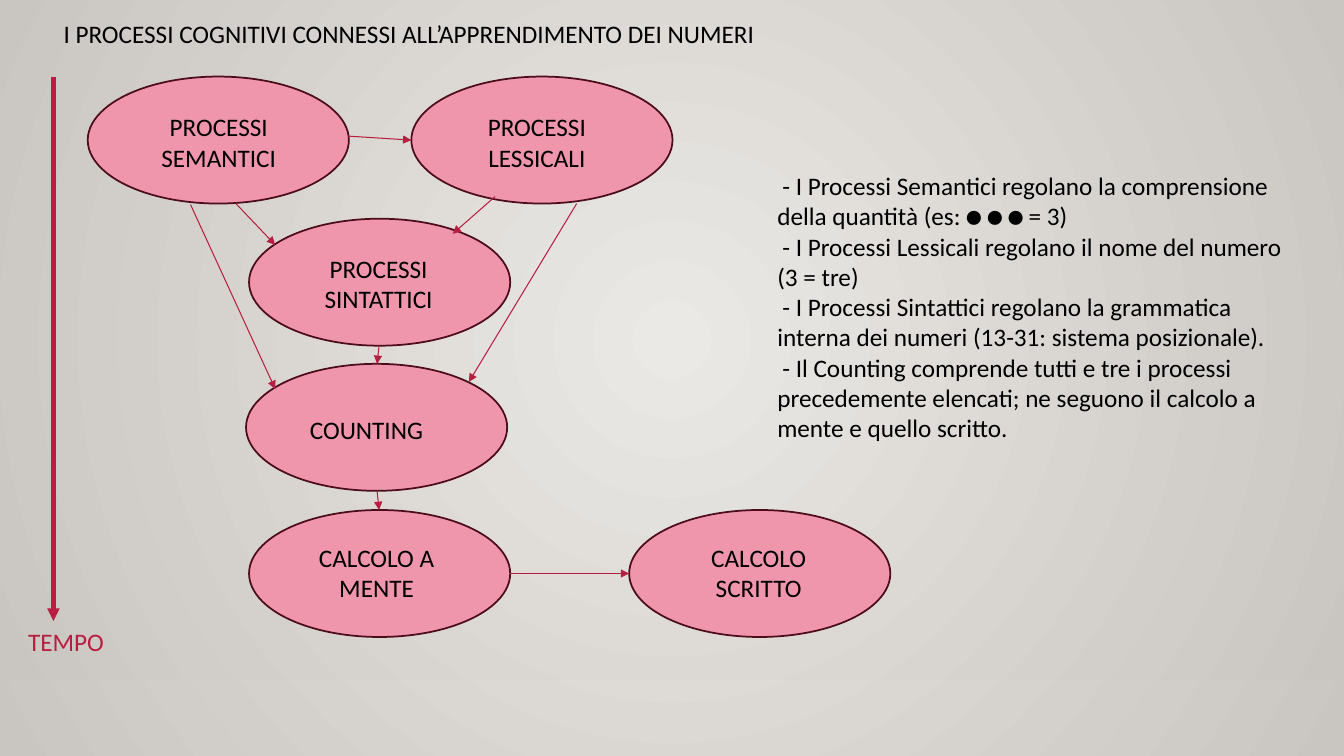
from lxml.etree import SubElement
from pptx import Presentation
from pptx.dml.color import RGBColor
from pptx.enum.shapes import MSO_CONNECTOR, MSO_SHAPE
from pptx.enum.text import MSO_ANCHOR, MSO_AUTO_SIZE, PP_ALIGN
from pptx.oxml.ns import qn
from pptx.util import Inches, Pt

BLACK = RGBColor(0x00, 0x00, 0x00)
CRIMSON = RGBColor(0xB7, 0x1E, 0x42)
PINK = RGBColor(0xEF, 0x96, 0xAC)
MAROON = RGBColor(0x4D, 0x0C, 0x1B)
GREY_LIGHT = RGBColor(0xEB, 0xE9, 0xE6)
GREY_DARK = RGBColor(0xC9, 0xC5, 0xC0)

FONT = "Calibri"
TEXT_SIZE = Pt(18)
OVAL_WIDTH, OVAL_HEIGHT = 2.59, 1.26

TITLE = "I PROCESSI COGNITIVI CONNESSI ALL’APPRENDIMENTO DEI NUMERI"

# Oval left and top, then label text, left, top, width and height
PROCESSES = [
    (0.87, 0.76, "PROCESSI SEMANTICI", (1.15, 1.06, 2.04, 0.71)),
    (4.08, 0.76, "PROCESSI LESSICALI", (4.42, 1.06, 1.81, 0.71)),
    (2.47, 2.17, "PROCESSI SINTATTICI", (2.75, 2.46, 2.01, 0.71)),
    (2.44, 3.61, "COUNTING", (2.73, 4.06, 1.81, 0.4)),
    (2.47, 5.06, "CALCOLO A MENTE", (2.83, 5.33, 1.81, 0.71)),
    (6.24, 5.06, "CALCOLO SCRITTO", (6.62, 5.33, 1.81, 0.71)),
]

ARROWS = [
    ((2.34, 2.02), (2.73, 2.43)),
    ((3.45, 1.35), (4.08, 1.39)),
    ((4.91, 1.95), (4.49, 2.32)),
    ((1.89, 2.03), (2.73, 3.86)),
    ((5.72, 2.02), (4.65, 3.79)),
    ((3.76, 3.43), (3.74, 3.61)),
    ((3.74, 4.87), (3.76, 5.06)),
    ((5.06, 5.69), (6.24, 5.69)),
]

EXPLANATIONS = [
    "- I Processi Semantici regolano la comprensione della quantità (es: ⚫️ ⚫️ ⚫️ = 3)",
    "- I Processi Lessicali regolano il nome del numero (3 = tre)",
    "- I Processi Sintattici regolano la grammatica interna dei numeri (13-31: sistema posizionale).",
    "- Il Counting comprende tutti e tre i processi precedemente elencati; "
    "ne seguono il calcolo a mente e quello scritto.",
]


def fill_radial(fill, element):
    """Give fill a round gradient from the centre; element holds its XML."""
    fill.gradient()
    for stop, color in zip(fill.gradient_stops, (GREY_LIGHT, GREY_DARK)):
        stop.color.rgb = color
    linear = element.find(".//" + qn("a:lin"))
    gradient = linear.getparent()
    gradient.remove(linear)
    circle = SubElement(gradient, qn("a:path"), {"path": "circle"})
    sides = dict.fromkeys("ltrb", "50000")
    SubElement(circle, qn("a:fillToRect"), sides)


def add_backdrop(slide):
    fill_radial(slide.background.fill, slide.element)
    backdrop = slide.shapes.add_shape(
        MSO_SHAPE.RECTANGLE, 0, 0, Inches(13.33), Inches(6.74))
    backdrop.shadow.inherit = False
    backdrop.line.fill.background()
    fill_radial(backdrop.fill, backdrop.element)
    # Behind the placeholders
    backdrop.element.getparent().insert(2, backdrop.element)


def place(shape, left, top, width, height):
    shape.left, shape.top = Inches(left), Inches(top)
    shape.width, shape.height = Inches(width), Inches(height)


def write(shape, texts, color=BLACK, alignment=PP_ALIGN.LEFT):
    frame = shape.text_frame
    frame.word_wrap = True
    frame.auto_size = MSO_AUTO_SIZE.NONE
    frame.vertical_anchor = MSO_ANCHOR.TOP
    for index, text in enumerate(texts):
        paragraph = frame.add_paragraph() if index else frame.paragraphs[0]
        paragraph.alignment = alignment
        paragraph.space_before = Pt(0)
        run = paragraph.add_run()
        run.text = text
        run.font.name = FONT
        run.font.size = TEXT_SIZE
        run.font.color.rgb = color


def add_label(slide, text, box, color=BLACK, alignment=PP_ALIGN.CENTER):
    label = slide.shapes.add_textbox(*map(Inches, box))
    write(label, [text], color, alignment)


def add_oval(slide, left, top):
    oval = slide.shapes.add_shape(
        MSO_SHAPE.OVAL, Inches(left), Inches(top),
        Inches(OVAL_WIDTH), Inches(OVAL_HEIGHT))
    oval.shadow.inherit = False
    oval.fill.solid()
    oval.fill.fore_color.rgb = PINK
    oval.line.color.rgb = MAROON
    oval.line.width = Pt(1.25)


def add_arrow(slide, start, end, width=0.75):
    arrow = slide.shapes.add_connector(
        MSO_CONNECTOR.STRAIGHT, *map(Inches, start + end))
    arrow.line.color.rgb = CRIMSON
    arrow.line.width = Pt(width)
    SubElement(arrow.line._get_or_add_ln(), qn("a:tailEnd"), {"type": "triangle"})
    SubElement(arrow.element.spPr, qn("a:effectLst"))


def fill_explanations(body):
    place(body, 7.61, 1.64, 5.37, 2.83)
    write(body, EXPLANATIONS)
    for paragraph in body.text_frame.paragraphs:
        properties = paragraph._p.get_or_add_pPr()
        properties.set("marL", "0")
        properties.set("indent", str(Inches(0.05)))
        SubElement(properties, qn("a:buNone"))


def main():
    presentation = Presentation()
    presentation.slide_width = Inches(13.33)
    presentation.slide_height = Inches(7.5)
    slide = presentation.slides.add_slide(presentation.slide_layouts[1])

    add_backdrop(slide)
    title = slide.shapes.title
    place(title, 0.53, 0.13, 8.73, 0.4)
    write(title, [TITLE])
    fill_explanations(slide.placeholders[1])

    for left, top, text, label_box in PROCESSES:
        add_oval(slide, left, top)
        add_label(slide, text, label_box)
    for start, end in ARROWS:
        add_arrow(slide, start, end)

    add_arrow(slide, (0.53, 0.76), (0.53, 6.16), width=3)
    add_label(slide, "TEMPO", (0.18, 6.16, 2.26, 0.4), CRIMSON, PP_ALIGN.LEFT)

    presentation.save("out.pptx")


if __name__ == "__main__":
    main()
